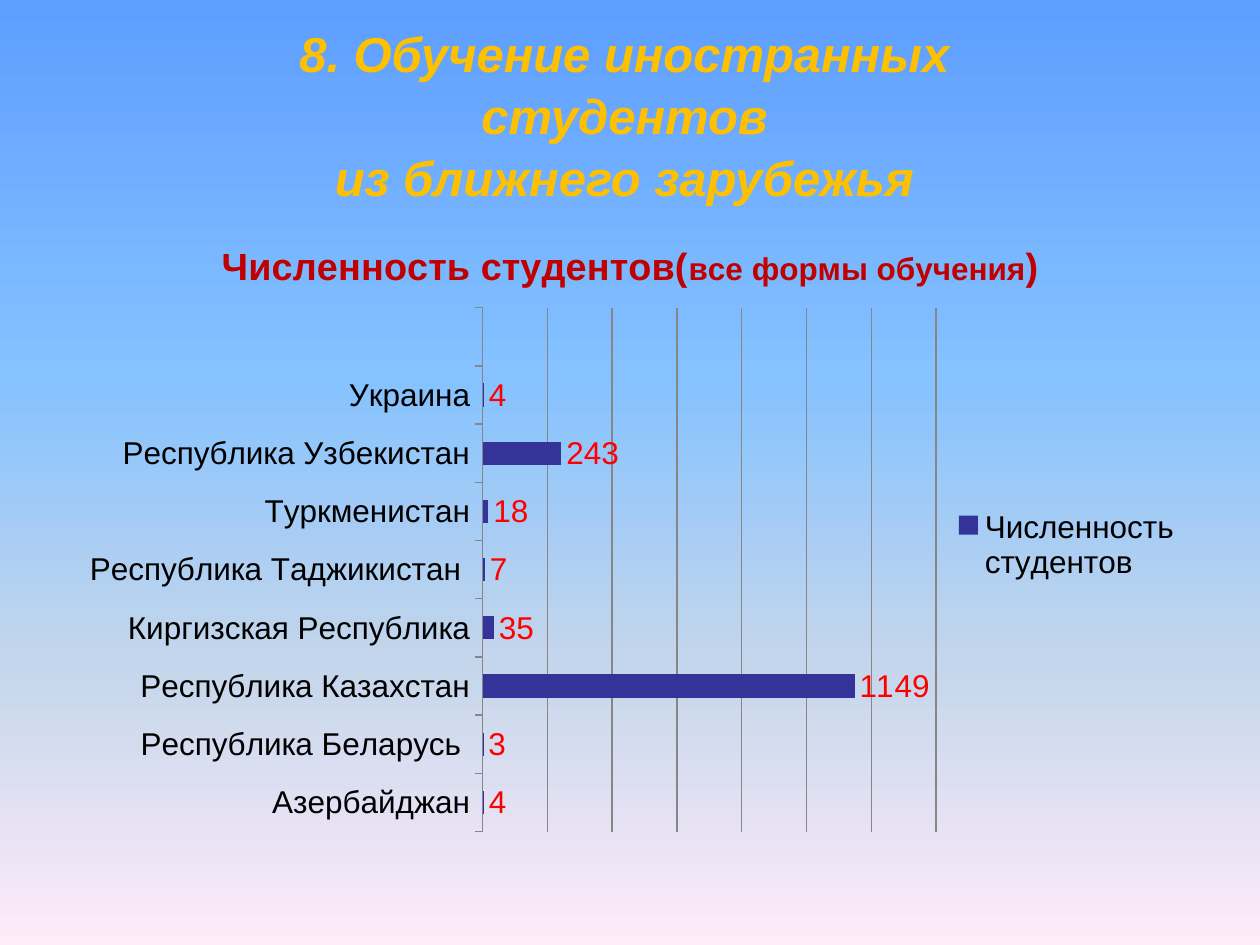
from lxml.etree import SubElement
from pptx import Presentation
from pptx.chart.data import CategoryChartData
from pptx.dml.color import RGBColor
from pptx.enum.chart import XL_CHART_TYPE, XL_LABEL_POSITION, XL_LEGEND_POSITION, XL_TICK_LABEL_POSITION, XL_TICK_MARK
from pptx.enum.text import MSO_ANCHOR, PP_ALIGN
from pptx.oxml import parse_xml
from pptx.oxml.ns import nsdecls, qn
from pptx.util import Inches, Pt

COLORS = {"heading": "FFC000", "chart_title": "C00000", "bar": "333399",
          "value": "FF0000", "text": "000000", "grid": "868686"}
BACKGROUND_STOPS = {0: "5E9EFF", 40: "85C2FF", 70: "C4D6EB", 100: "FFEBFA"}
STUDENTS = {
    "Азербайджан": 4,
    "Республика Беларусь ": 3,
    "Республика Казахстан": 1149,
    "Киргизская Республика": 35,
    "Республика Таджикистан ": 7,
    "Туркменистан": 18,
    "Республика Узбекистан": 243,
    "Украина": 4,
    "": None,
}


def add_text(paragraph, text, size, color, bold=False, italic=False):
    for index, line in enumerate(text.split("\n")):
        if index:
            paragraph.add_line_break()
        run = paragraph.add_run()
        run.text = line
        run.font.name = "Arial"
        run.font.size = Pt(size)
        run.font.bold = bold
        run.font.italic = italic
        run.font.color.rgb = RGBColor.from_string(COLORS[color])


def set_layout(element, target, left, top, width, height):
    for old in element.findall(qn("c:layout")):
        element.remove(old)
    layout = parse_xml(f"<c:layout {nsdecls('c')}/>")
    manual = SubElement(layout, qn("c:manualLayout"))
    settings = {"layoutTarget": target, "xMode": "edge", "yMode": "edge",
                "x": left, "y": top, "w": width, "h": height}
    for name, value in settings.items():
        if value is not None:
            SubElement(manual, qn(f"c:{name}")).set("val", str(value))
    position = 1 if element.tag == qn("c:legend") else 0
    element.insert(position, layout)


presentation = Presentation()
presentation.slide_width = Inches(10)
presentation.slide_height = Inches(7.5)
slide = presentation.slides.add_slide(presentation.slide_layouts[6])

background = slide.background.fill
background.gradient()
background.gradient_angle = 270
stop_list = next(slide.background._cSld.iter(qn("a:gsLst")))
for stop in list(stop_list):
    stop_list.remove(stop)
for percent, color in BACKGROUND_STOPS.items():
    stop = SubElement(stop_list, qn("a:gs"), pos=str(percent * 1000))
    SubElement(stop, qn("a:srgbClr"), val=color)

heading = slide.shapes.add_textbox(Inches(1.48), Inches(0.16), Inches(6.95), Inches(1.48))
heading.text_frame.word_wrap = True
heading.text_frame.vertical_anchor = MSO_ANCHOR.MIDDLE
paragraph = heading.text_frame.paragraphs[0]
paragraph.alignment = PP_ALIGN.CENTER
paragraph.line_spacing = 1.05
add_text(paragraph, "8. Обучение иностранных студентов\nиз ближнего зарубежья",
         size=28, color="heading", bold=True, italic=True)

chart_data = CategoryChartData()
chart_data.categories = list(STUDENTS)
chart_data.add_series("Численность студентов", list(STUDENTS.values()))
chart = slide.shapes.add_chart(XL_CHART_TYPE.BAR_CLUSTERED, Inches(0.5), Inches(1.75),
                               Inches(9), Inches(4.95), chart_data).chart
chart.font.name = "Arial"
chart.font.size = Pt(18)
chart.font.color.rgb = RGBColor.from_string(COLORS["text"])

chart.has_title = True
chart.chart_title.include_in_layout = False
title_paragraph = chart.chart_title.text_frame.paragraphs[0]
for text, size in (("Численность студентов(", 21.6), ("все формы обучения", 18), (")", 21.6)):
    add_text(title_paragraph, text, size=size, color="chart_title", bold=True)

plot = chart.plots[0]
plot.gap_width = 150
plot.vary_by_categories = False
series = plot.series[0]
series.format.fill.solid()
series.format.fill.fore_color.rgb = RGBColor.from_string(COLORS["bar"])
plot.has_data_labels = True
labels = plot.data_labels
labels.show_value = True
labels.position = XL_LABEL_POSITION.OUTSIDE_END
labels.font.name = "Arial"
labels.font.size = Pt(18)
labels.font.color.rgb = RGBColor.from_string(COLORS["value"])

value_axis = chart.value_axis
value_axis.minimum_scale = 0
value_axis.maximum_scale = 1400
value_axis.major_unit = 200
value_axis.has_major_gridlines = True
value_axis.visible = False
category_axis = chart.category_axis
category_axis.major_tick_mark = XL_TICK_MARK.OUTSIDE
category_axis.tick_label_position = XL_TICK_LABEL_POSITION.NEXT_TO_AXIS
for line in (value_axis.major_gridlines.format.line, category_axis.format.line):
    line.color.rgb = RGBColor.from_string(COLORS["grid"])
    line.width = Pt(0.75)

chart.has_legend = True
chart.legend.position = XL_LEGEND_POSITION.RIGHT
chart.legend.include_in_layout = False
chart_element = chart._chartSpace.chart
set_layout(chart_element.plotArea, "inner", 0.37, 0.14, 0.4, 0.84)
set_layout(chart_element.find(qn("c:legend")), None, 0.78, 0.44, 0.21, 0.16)

presentation.save("out.pptx")
